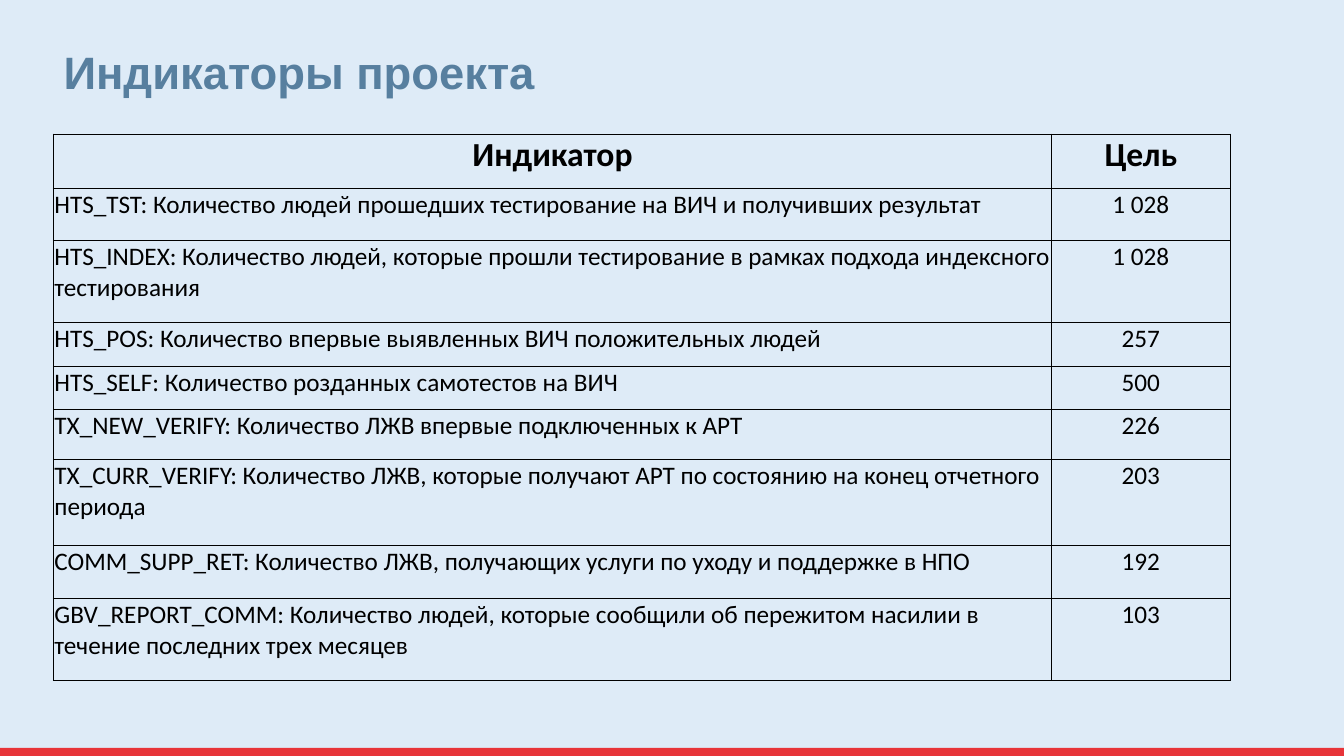
from lxml import etree
from pptx import Presentation
from pptx.dml.color import RGBColor
from pptx.enum.shapes import MSO_SHAPE
from pptx.enum.text import MSO_ANCHOR, PP_ALIGN
from pptx.oxml.ns import qn
from pptx.util import Inches, Pt

COLORS = {
    "background": "DEEBF7",
    "stripe": "E73439",
    "title": "577F9F",
    "text": "000000",
    "border": "000000",
}
SLIDE_WIDTH, SLIDE_HEIGHT = 13.33, 7.5
STRIPE_HEIGHT = 0.08

HEADINGS = ("Индикатор", "Цель")
INDICATORS = [
    ("HTS_TST: Количество людей прошедших тестирование на ВИЧ и получивших результат", "1 028"),
    ("HTS_INDEX: Количество людей, которые прошли тестирование в рамках подхода "
     "индексного тестирования", "1 028"),
    ("HTS_POS: Количество впервые выявленных ВИЧ положительных людей", "257"),
    ("HTS_SELF: Количество розданных самотестов на ВИЧ", "500"),
    ("TX_NEW_VERIFY: Количество ЛЖВ впервые подключенных к АРТ", "226"),
    ("TX_CURR_VERIFY: Количество ЛЖВ, которые получают АРТ по состоянию на конец "
     "отчетного периода", "203"),
    ("COMM_SUPP_RET: Количество ЛЖВ, получающих услуги по уходу и поддержке в НПО", "192"),
    ("GBV_REPORT_COMM: Количество людей, которые сообщили об пережитом насилии в "
     "течение последних трех месяцев", "103"),
]
COLUMN_WIDTHS = (9.9, 1.77)
ROW_HEIGHTS = (0.54, 0.52, 0.81, 0.44, 0.42, 0.5, 0.85, 0.53, 0.81)


def rgb(name):
    return RGBColor.from_string(COLORS[name])


def write_text(frame, text, font="Calibri", size=18, color="text", bold=False,
               align=PP_ALIGN.LEFT, line_spacing=1.0):
    frame.word_wrap = True
    paragraph = frame.paragraphs[0]
    paragraph.alignment = align
    paragraph.line_spacing = line_spacing
    run = paragraph.add_run()
    run.text = text
    run.font.name = font
    run.font.size = Pt(size)
    run.font.bold = bold
    run.font.color.rgb = rgb(color)


def add_backdrop(slide):
    background = slide.background.fill
    background.solid()
    background.fore_color.rgb = rgb("background")
    stripe = slide.shapes.add_shape(
        MSO_SHAPE.RECTANGLE, 0, Inches(SLIDE_HEIGHT - STRIPE_HEIGHT),
        Inches(SLIDE_WIDTH), Inches(STRIPE_HEIGHT))
    stripe.shadow.inherit = False
    stripe.fill.solid()
    stripe.fill.fore_color.rgb = rgb("stripe")
    stripe.line.fill.background()


def add_title(slide, left, top, width, height):
    title = slide.shapes.title
    title.left, title.top = Inches(left), Inches(top)
    title.width, title.height = Inches(width), Inches(height)
    title.text_frame.vertical_anchor = MSO_ANCHOR.BOTTOM
    write_text(title.text_frame, "Индикаторы проекта", font="Arial", size=32.4,
               color="title", bold=True, line_spacing=0.9)


def set_borders(cell):
    properties = cell._tc.get_or_add_tcPr()
    for position, side in enumerate(("a:lnL", "a:lnR", "a:lnT", "a:lnB")):
        line = etree.Element(qn(side), w=str(Pt(0.75)))
        fill = etree.SubElement(line, qn("a:solidFill"))
        etree.SubElement(fill, qn("a:srgbClr"), val=COLORS["border"])
        properties.insert(position, line)


def add_indicator_table(slide, left, top):
    rows = [HEADINGS] + INDICATORS
    table = slide.shapes.add_table(
        len(rows), len(HEADINGS), Inches(left), Inches(top),
        Inches(sum(COLUMN_WIDTHS)), Inches(sum(ROW_HEIGHTS))).table
    table.horz_banding = False
    for column, width in zip(table.columns, COLUMN_WIDTHS):
        column.width = Inches(width)
    for row_index, (values, height) in enumerate(zip(rows, ROW_HEIGHTS)):
        table.rows[row_index].height = Inches(height)
        is_heading = row_index == 0
        for column_index, value in enumerate(values):
            cell = table.cell(row_index, column_index)
            cell.margin_left = cell.margin_right = cell.margin_top = Inches(0.01)
            cell.margin_bottom = 0
            cell.fill.background()
            set_borders(cell)
            centered = is_heading or column_index == 1
            write_text(cell.text_frame, value, size=24 if is_heading else 18,
                       bold=is_heading,
                       align=PP_ALIGN.CENTER if centered else PP_ALIGN.LEFT)


def main():
    presentation = Presentation()
    presentation.slide_width = Inches(SLIDE_WIDTH)
    presentation.slide_height = Inches(SLIDE_HEIGHT)
    slide = presentation.slides.add_slide(presentation.slide_layouts[5])
    add_backdrop(slide)
    add_title(slide, 0.53, 0.25, 12.35, 0.79)
    add_indicator_table(slide, 0.53, 1.33)
    presentation.save("out.pptx")


if __name__ == "__main__":
    main()
